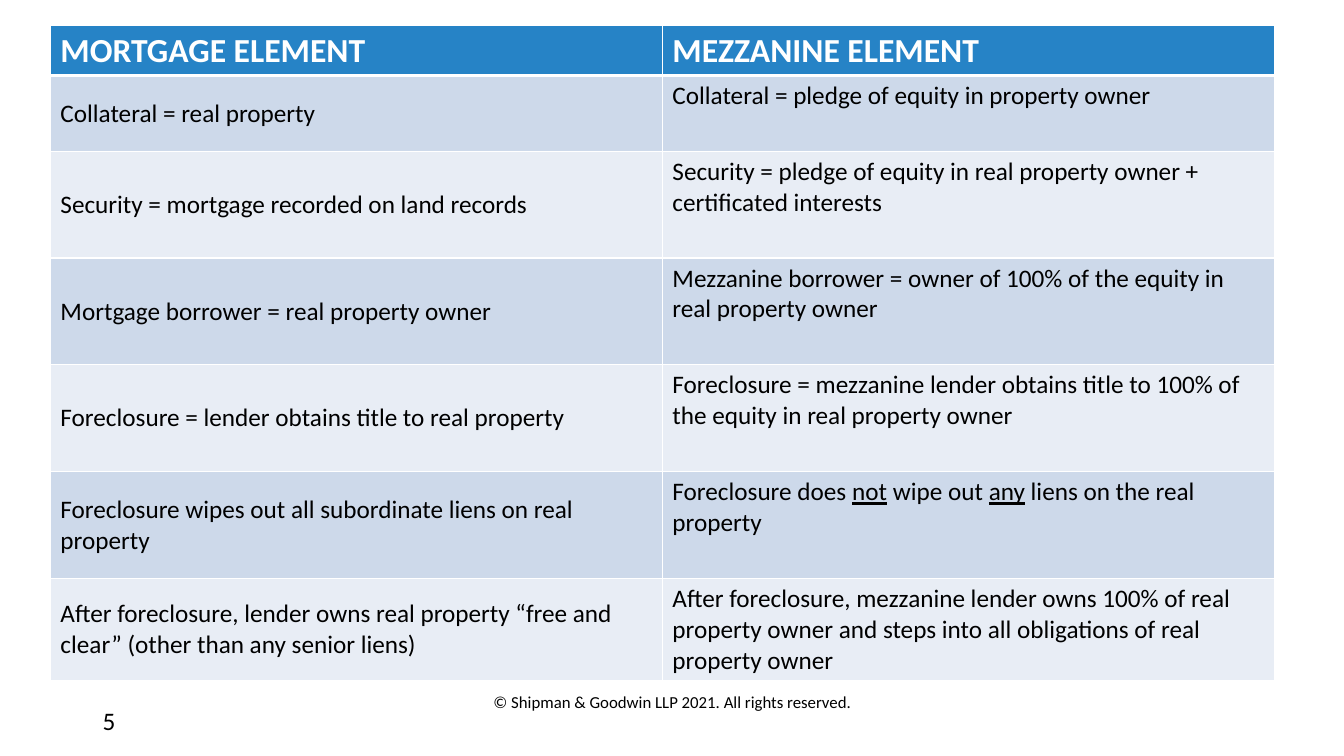
from lxml import etree
from pptx import Presentation
from pptx import util as u
from pptx.dml.color import RGBColor
from pptx.enum import text
from pptx.oxml.ns import qn

COLORS = {"header": "2683C6", "dark": "CDD9EA", "light": "E8EDF5",
          "white": "FFFFFF", "black": "000000"}
HEADINGS = ("MORTGAGE ELEMENT", "MEZZANINE ELEMENT")
COMPARISONS = [
    ("Collateral = real property",
     "Collateral = pledge of equity in property owner"),
    ("Security = mortgage recorded on land records",
     "Security = pledge of equity in real property owner + certificated interests"),
    ("Mortgage borrower = real property owner",
     "Mezzanine borrower = owner of 100% of the equity in real property owner"),
    ("Foreclosure = lender obtains title to real property",
     "Foreclosure = mezzanine lender obtains title to 100% of the equity in real property owner"),
    ("Foreclosure wipes out all subordinate liens on real property",
     "Foreclosure does _not_ wipe out _any_ liens on the real property"),
    ("After foreclosure, lender owns real property “free and clear” (other than any senior liens)",
     "After foreclosure, mezzanine lender owns 100% of real property owner and steps into all "
     "obligations of real property owner"),
]
ROW_HEIGHTS = [0.5, 0.75] + [1.06] * 4 + [1.01]
COLUMN_WIDTH = 6.07


class ComparisonSlide:
    """Hold the text style and the current slide, and add elements to it."""

    def __init__(self, presentation):
        self.font_name = "Calibri"
        self.slide = presentation.slides.add_slide(presentation.slide_layouts[6])

    def add_runs(self, paragraph, content, color="black", **font_values):
        for index, part in enumerate(content.split("_")):
            run = paragraph.add_run()
            run.text = part
            values = {"name": self.font_name, "underline": index % 2 == 1, **font_values}
            for name, value in values.items():
                setattr(run.font, name, value)
            run.font.color.rgb = RGBColor.from_string(COLORS[color])

    def add_text(self, content, left, top, width, height, size, alignment):
        frame = self.slide.shapes.add_textbox(
            *map(u.Inches, (left, top, width, height))).text_frame
        frame.word_wrap = True
        frame.paragraphs[0].alignment = alignment
        self.add_runs(frame.paragraphs[0], content, size=u.Pt(size))

    def add_borders(self, cell, widths):
        properties = cell._tc.get_or_add_tcPr()
        for side, width in widths.items():
            line = etree.SubElement(properties, qn(f"a:ln{side}"), w=str(u.Pt(width)))
            fill = etree.SubElement(line, qn("a:solidFill"))
            etree.SubElement(fill, qn("a:srgbClr"), val=COLORS["white"])

    def add_table(self, rows, left, top):
        table = self.slide.shapes.add_table(
            len(rows), len(HEADINGS), u.Inches(left), u.Inches(top),
            u.Inches(COLUMN_WIDTH * len(HEADINGS)), u.Inches(sum(ROW_HEIGHTS))).table
        for column in table.columns:
            column.width = u.Inches(COLUMN_WIDTH)
        for row_index, contents in enumerate(rows):
            table.rows[row_index].height = u.Inches(ROW_HEIGHTS[row_index])
            for column_index, content in enumerate(contents):
                self.fill_cell(table.cell(row_index, column_index), content,
                               row_index, column_index)

    def fill_cell(self, cell, content, row_index, column_index):
        is_header = row_index == 0
        self.add_borders(cell, {"L": 1, "R": 1, "T": 3 if row_index == 1 else 1,
                                "B": 3 if is_header else 1})
        background = "header" if is_header else ("light", "dark")[row_index % 2]
        cell.fill.solid()
        cell.fill.fore_color.rgb = RGBColor.from_string(COLORS[background])
        centered = column_index == 0 and not is_header
        cell.vertical_anchor = text.MSO_ANCHOR.MIDDLE if centered else text.MSO_ANCHOR.TOP
        paragraph = cell.text_frame.paragraphs[0]
        if not is_header:
            paragraph.space_after = u.Pt(3)
        self.add_runs(paragraph, content, "white" if is_header else "black",
                      size=u.Pt(24 if is_header else 18), bold=is_header)


def main():
    presentation = Presentation()
    presentation.slide_width = u.Inches(13.33)
    presentation.slide_height = u.Inches(7.5)
    slide = ComparisonSlide(presentation)
    slide.add_text("© Shipman & Goodwin LLP 2021. All rights reserved.",
                   4.42, 6.81, 4.5, 0.4, 12, text.PP_ALIGN.CENTER)
    slide.add_text("5", 0.92, 6.95, 3, 0.4, 18, text.PP_ALIGN.LEFT)
    slide.add_table([HEADINGS] + COMPARISONS, 0.5, 0.25)
    presentation.save("out.pptx")


if __name__ == "__main__":
    main()
